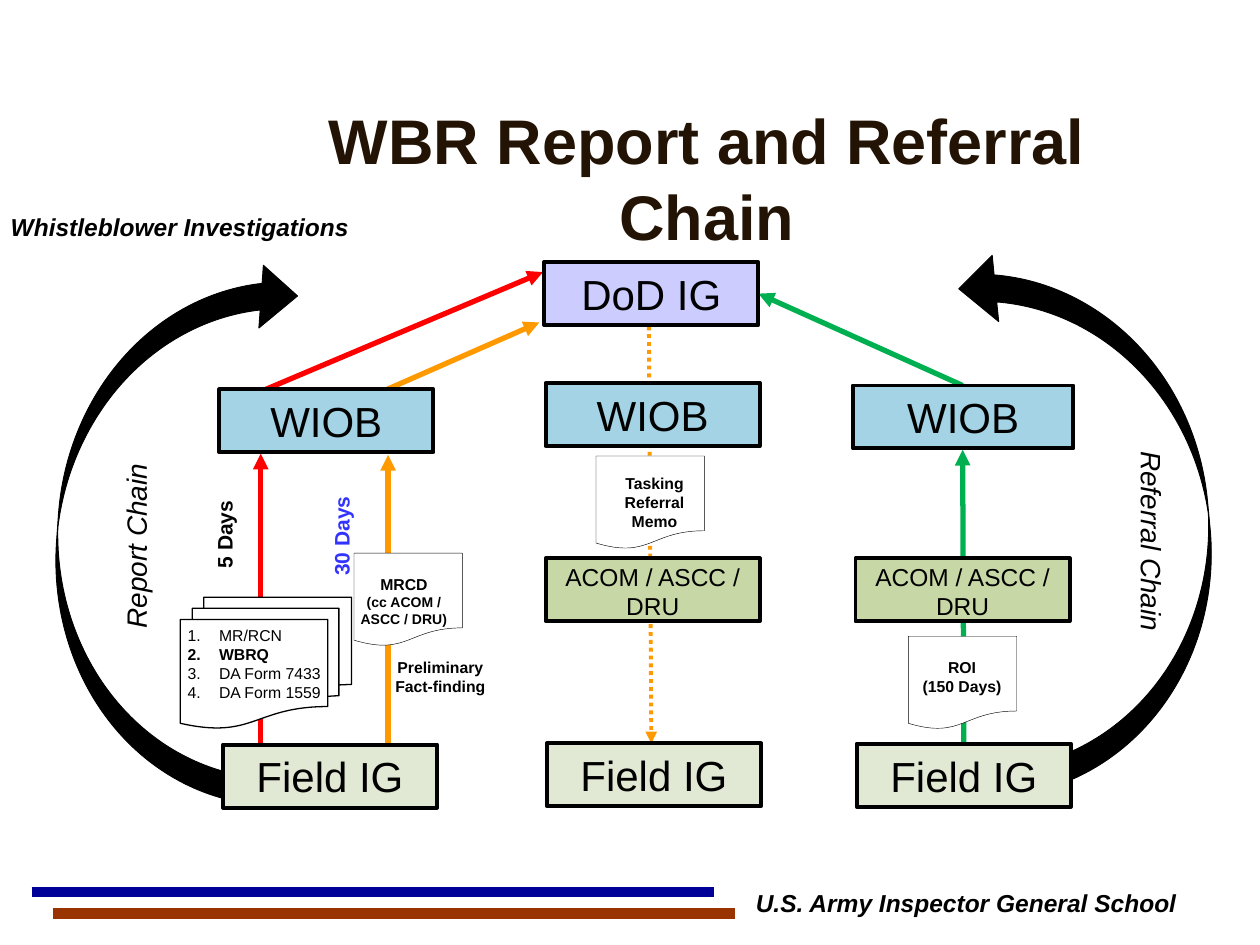
import pptx
import pptx.util
import pptx.dml.color
import pptx.enum.dml
import pptx.enum.shapes
import pptx.enum.text
import pptx.oxml.ns
import lxml.etree

Pt = pptx.util.Pt
SHAPE = pptx.enum.shapes.MSO_SHAPE
ALIGN = pptx.enum.text.PP_ALIGN
qn = pptx.oxml.ns.qn

COLORS = {
    "black": "000000", "white": "FFFFFF", "title": "221304",
    "navy": "000099", "rust": "993300", "red": "FF0000",
    "orange": "FF9900", "green": "00B050", "days": "3333FF",
    "dod": "CCCCFF", "wiob": "A3D3E4", "acom": "C7D7A5", "field": "E1E9D5",
}
COLORS = {name: pptx.dml.color.RGBColor.from_string(value) for name, value in COLORS.items()}

presentation = pptx.Presentation()
presentation.slide_width, presentation.slide_height = Pt(720), Pt(540)
slide = presentation.slides.add_slide(presentation.slide_layouts[6])


def add_preset(kind, place, fill, line_width):
    """Add a black-edged preset shape at (left, top, width, height)."""
    shape = slide.shapes.add_shape(kind, *[Pt(length) for length in place])
    shape.shadow.inherit = False
    shape.fill.solid()
    shape.fill.fore_color.rgb = COLORS[fill]
    shape.line.color.rgb = COLORS["black"]
    shape.line.width = Pt(line_width)
    return shape


def write(shape, paragraphs, align, color="black", numbered=False):
    """Fill a shape with (text, size, style) paragraphs; style holds b and/or i."""
    frame = shape.text_frame
    frame.word_wrap = True
    for index, (text, size, style) in enumerate(paragraphs):
        paragraph = frame.add_paragraph() if index else frame.paragraphs[0]
        paragraph.alignment = align
        if numbered:
            properties = paragraph._p.get_or_add_pPr()
            properties.set("marL", str(Pt(18)))
            properties.set("indent", str(-Pt(18)))
            lxml.etree.SubElement(properties, qn("a:buAutoNum"), type="arabicPeriod")
        run = paragraph.add_run()
        run.text = text
        run.font.name = "Arial"
        run.font.size = Pt(size)
        run.font.bold = "b" in style
        run.font.italic = "i" in style
        run.font.color.rgb = COLORS[color]


# Curved arrows on both sides
curved_arrows = [
    ((33.1, 146.2, 127.4, 309.6), 4.1, (0.12, 0.283, 0.163), ("flipV",)),
    ((560.9, 139, 129.6, 310.3), 354.4, (0.12, 0.294, 0.161), ("flipH", "flipV")),
]
for place, rotation, adjustments, flips in curved_arrows:
    arrow = add_preset(SHAPE.CURVED_RIGHT_ARROW, place, "black", 0.5)
    arrow.rotation = rotation
    for index, value in enumerate(adjustments):
        arrow.adjustments[index] = value
    for flip in flips:
        arrow._element.spPr.find(qn("a:xfrm")).set(flip, "1")

# Footer stripes and flow arrows: from, to, colour, width, arrowhead
connectors = [
    ((18, 509.8), (408.2, 509.8), "navy", 6, False),
    ((30.2, 522), (419.8, 522), "rust", 6, False),
    ((219.6, 223.2), (308.2, 184.3), "orange", 3, True),
    ((221.8, 424.8), (221.8, 259.9), "orange", 3, True),
    ((550.1, 220.3), (433.4, 167.8), "green", 3, True),
    ((146.9, 224.6), (310.3, 155.5), "red", 3, True),
    ((370.8, 186.5), (372.2, 424.8), "orange", 2.25, True),
    ((550.8, 424.8), (550.1, 257), "green", 3, True),
    ((149, 426.2), (149, 259.2), "red", 3, True),
]
for start, end, color, width, has_head in connectors:
    connector = slide.shapes.add_connector(
        pptx.enum.shapes.MSO_CONNECTOR.STRAIGHT, *[Pt(length) for length in start + end])
    connector.line.color.rgb = COLORS[color]
    connector.line.width = Pt(width)
    if width == 2.25:
        connector.line.dash_style = pptx.enum.dml.MSO_LINE.ROUND_DOT
    if has_head:
        lxml.etree.SubElement(connector.line._get_or_add_ln(), qn("a:tailEnd"), type="triangle")
    lxml.etree.SubElement(connector._element.spPr, qn("a:effectLst"))

# Offices
offices = [
    ("DoD IG", "dod", 311, 149.8, 122.4),
    ("WIOB", "wiob", 125.3, 222.5, 122.4),
    ("WIOB", "wiob", 311.8, 218.9, 122.4),
    ("WIOB", "wiob", 487.4, 220.3, 126),
    ("", "acom", 311.8, 319, 122.4),
    ("", "acom", 488.9, 319, 122.4),
    ("Field IG", "field", 127.4, 425.5, 122.4),
    ("Field IG", "field", 312.5, 424.8, 122.4),
    ("Field IG", "field", 489.6, 425, 122.4),
]
for name, fill, left, top, width in offices:
    office = add_preset(SHAPE.RECTANGLE, (left, top, width, 36), fill, 2.25)
    if name:
        write(office, [(name, 24, "")], ALIGN.CENTER)

# Documents passed along the chains
add_preset(SHAPE.FLOWCHART_MULTIDOCUMENT, (103, 341.3, 97.9, 74.9), "white", 0.75)
for left, top in [(202.3, 316.1), (340.6, 260.6), (519.1, 363.6)]:
    add_preset(SHAPE.FLOWCHART_DOCUMENT, (left, top, 61.9, 53.3), "white", 0.25)

# Texts: place, rotation, alignment, colour, paragraphs
texts = [
    ((126, 56.2, 556, 90), 0, ALIGN.CENTER, "title", [("WBR Report and Referral Chain", 36, "b")]),
    ((-1, 117.4, 324, 36), 0, ALIGN.LEFT, "black", [("Whistleblower Investigations", 14, "bi")]),
    ((390.2, 504, 324, 36), 0, ALIGN.CENTER, "black",
     [("U.S. Army Inspector General School", 14, "bi")]),
    ((311.8, 317.5, 122.4, 41), 0, ALIGN.CENTER, "black", [("ACOM / ASCC / DRU", 14, "")]),
    ((488.9, 317.5, 122.4, 41), 0, ALIGN.CENTER, "black", [("ACOM / ASCC / DRU", 14, "")]),
    ((95.8, 288.7, 64.8, 21.6), 270, ALIGN.LEFT, "black", [("5 Days", 12, "b")]),
    ((162.7, 293, 64.8, 21.6), 270, ALIGN.LEFT, "days", [("30 Days", 12, "b")]),
    ((23.8, 285.8, 133.9, 52.6), 270, ALIGN.CENTER, "black", [("Report Chain", 16, "i")]),
    ((578.2, 283, 133.9, 52.6), 90, ALIGN.CENTER, "black", [("Referral Chain", 16, "i")]),
    ((196.6, 324.7, 68.4, 51.1), 0, ALIGN.CENTER, "black",
     [("MRCD", 9, "b"), ("(cc ACOM / ASCC / DRU)", 8, "b")]),
    ((339.8, 267.1, 68.4, 53.3), 0, ALIGN.CENTER, "black", [("Tasking Referral Memo", 9, "b")]),
    ((210.2, 372.2, 82.8, 28.8), 0, ALIGN.CENTER, "black", [("Preliminary Fact-finding", 9, "b")]),
    ((515.5, 372.2, 68.4, 42.5), 0, ALIGN.CENTER, "black", [("ROI", 9, "b"), ("(150 Days)", 9, "b")]),
]
for place, rotation, align, color, paragraphs in texts:
    text_box = slide.shapes.add_textbox(*[Pt(length) for length in place])
    text_box.rotation = rotation
    write(text_box, paragraphs, align, color)
    if color == "title":
        text_box.text_frame.vertical_anchor = pptx.enum.text.MSO_ANCHOR.MIDDLE

form_list = slide.shapes.add_textbox(Pt(100.1), Pt(354.2), Pt(102.2), Pt(51.1))
write(form_list, [("MR/RCN", 9, ""), ("WBRQ", 9, "b"), ("DA Form 7433", 9, ""),
                  ("DA Form 1559", 9, "")], ALIGN.LEFT, numbered=True)

presentation.save("out.pptx")
